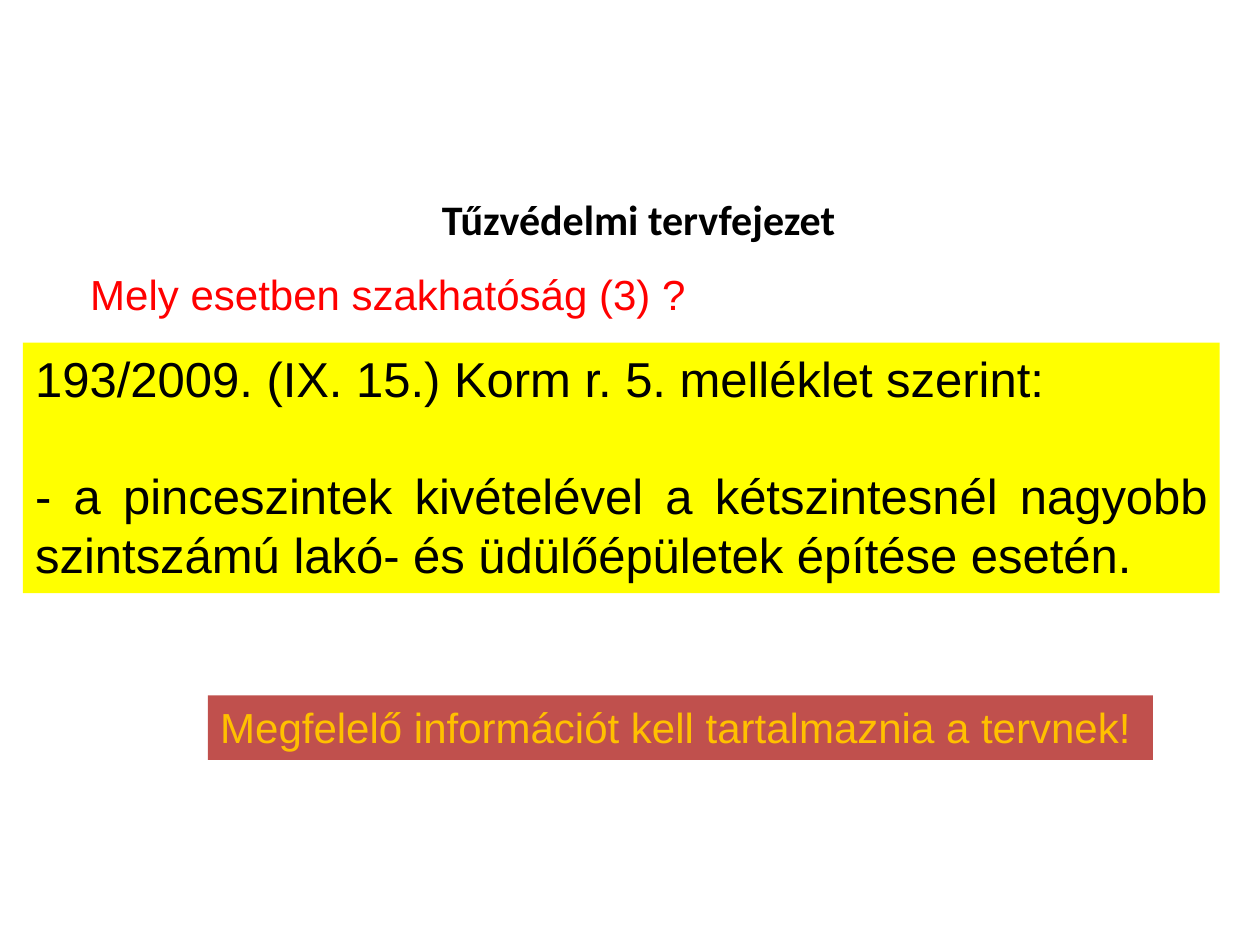
import dataclasses

import pptx
import pptx.dml.color
import pptx.enum.shapes
import pptx.enum.text
import pptx.util

Cm = pptx.util.Cm
Pt = pptx.util.Pt
RGB = pptx.dml.color.RGBColor
Align = pptx.enum.text.PP_ALIGN


@dataclasses.dataclass(frozen=True)
class Theme:
    black: RGB = RGB(0x00, 0x00, 0x00)
    red: RGB = RGB(0xFF, 0x00, 0x00)
    yellow: RGB = RGB(0xFF, 0xFF, 0x00)
    brick: RGB = RGB(0xC0, 0x50, 0x4D)
    amber: RGB = RGB(0xFF, 0xC0, 0x00)
    heading_font: str = "Calibri"
    body_font: str = "Arial"
    normal: Pt = Pt(24)
    large: Pt = Pt(28)
    rule_gap: Pt = Pt(33)


class SlideBuilder:
    def __init__(self, slide, theme):
        self.slide = slide
        self.theme = theme

    def add_paragraphs(self, shape, paragraphs, color, size, align=Align.LEFT,
                       font=None, bold=False, gap=Pt(0)):
        """Fill a shape with paragraphs, leaving gap between them."""
        frame = shape.text_frame
        frame.word_wrap = True
        frame.vertical_anchor = pptx.enum.text.MSO_ANCHOR.TOP
        for index, words in enumerate(paragraphs):
            paragraph = frame.add_paragraph() if index else frame.paragraphs[0]
            paragraph.alignment = align
            if index:
                paragraph.space_before = gap
            run = paragraph.add_run()
            run.text = words
            run.font.name = font or self.theme.body_font
            run.font.size = size
            run.font.bold = bold
            run.font.color.rgb = color
        return frame

    def text(self, box, paragraphs, color, size, **style):
        label = self.slide.shapes.add_textbox(*map(Cm, box))
        return self.add_paragraphs(label, paragraphs, color, size, **style)

    def panel(self, box, fill, paragraphs, color, size, **style):
        rectangle = self.slide.shapes.add_shape(
            pptx.enum.shapes.MSO_SHAPE.RECTANGLE, *map(Cm, box))
        rectangle.shadow.inherit = False
        rectangle.fill.solid()
        rectangle.fill.fore_color.rgb = fill
        rectangle.line.fill.background()
        return self.add_paragraphs(rectangle, paragraphs, color, size, **style)


def main():
    deck = pptx.Presentation()
    deck.slide_width, deck.slide_height = Cm(25.4), Cm(19.05)
    theme = Theme()
    builder = SlideBuilder(deck.slides.add_slide(deck.slide_layouts[6]), theme)

    heading = builder.text(
        (0.81, 3.89, 24.13, 1.75), ["Tűzvédelmi tervfejezet"],
        theme.black, theme.normal, align=Align.CENTER,
        font=theme.heading_font, bold=True)
    heading.paragraphs[0].line_spacing = 0.9

    builder.panel(
        (0.46, 6.91, 24.13, 5.05), theme.yellow,
        ["193/2009. (IX. 15.) Korm r. 5. melléklet szerint:",
         "- a pinceszintek kivételével a kétszintesnél nagyobb "
         "szintszámú lakó- és üdülőépületek építése esetén."],
        theme.black, theme.large, align=Align.JUSTIFY, gap=theme.rule_gap)

    builder.text(
        (1.57, 5.28, 12.65, 1.3), ["Mely esetben szakhatóság (3) ?"],
        theme.red, theme.normal)

    builder.panel(
        (4.19, 14.02, 19.05, 1.3), theme.brick,
        ["Megfelelő információt kell tartalmaznia a tervnek!"],
        theme.amber, theme.normal)

    deck.save("out.pptx")


if __name__ == "__main__":
    main()
